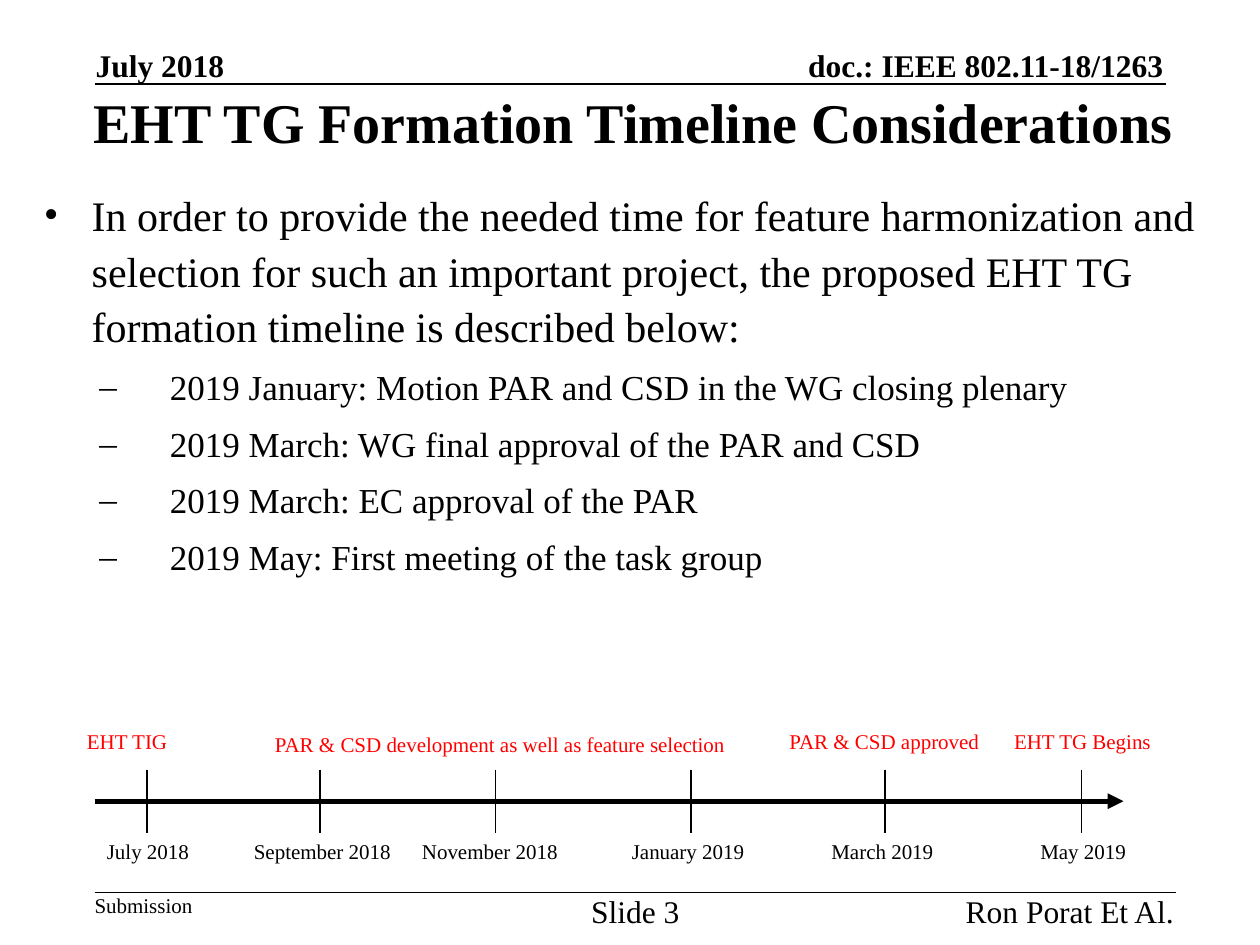
from lxml import etree
from pptx import Presentation
from pptx.dml.color import RGBColor
from pptx.enum.shapes import MSO_CONNECTOR
from pptx.enum.text import MSO_ANCHOR, PP_ALIGN
from pptx.oxml.ns import qn
from pptx.util import Inches, Pt

LEFT, CENTER, RIGHT = PP_ALIGN.LEFT, PP_ALIGN.CENTER, PP_ALIGN.RIGHT
TOP, MIDDLE, BOTTOM = MSO_ANCHOR.TOP, MSO_ANCHOR.MIDDLE, MSO_ANCHOR.BOTTOM
STRAIGHT = MSO_CONNECTOR.STRAIGHT

# The slide is a grid of 120 columns by 90 rows
COLUMNS, ROWS = 120, 90
SLIDE_WIDTH, SLIDE_HEIGHT = Inches(10), Inches(7.5)

THEME = {
    "font": "Times New Roman",
    "ink": RGBColor(0, 0, 0),
    "accent": RGBColor(255, 0, 0),
    "title": 32, "body": 24, "detail": 20, "frame": 18, "small": 12,
    "thin": 1, "thick": 3,
}

TITLE = "EHT TG Formation Timeline Considerations "
BODY = (
    "In order to provide the needed time for feature harmonization and "
    "selection for such an important project, the proposed EHT TG "
    "formation timeline is described below:"
)
STEPS = [
    "2019 January: Motion PAR and CSD in the WG closing plenary",
    "2019 March: WG final approval of the PAR and CSD",
    "2019 March: EC approval of the PAR",
    "2019 May: First meeting of the task group",
]

# Header and footer: text, box, size, bold, alignment, anchor
FRAME_TEXTS = [
    ("July 2018", (9.1, 4.4, 16, 3.6), "frame", True, LEFT, BOTTOM),
    ("doc.: IEEE 802.11-18/1263", (66.8, 4.4, 44, 3.6), "frame", True, RIGHT, BOTTOM),
    ("Submission", (9, 85, 14, 2.4), "small", False, LEFT, TOP),
    ("Slide 3", (53.5, 85, 14, 3.6), "frame", False, CENTER, TOP),
    ("Ron Porat Et Al.", (85.8, 85, 26, 3.6), "frame", False, RIGHT, TOP),
]
RULES = [(9, 111, 8), (9, 112, 85)]  # first column, last column, row

# Timeline: month, tick column, label column, label width
MONTHS = [
    ("July 2018", 14, 9, 10.3),
    ("September 2018", 30.5, 23, 15.6),
    ("November 2018", 47.2, 39, 15.5),
    ("January 2019", 65.8, 59, 13.2),
    ("March 2019", 84.3, 78, 12.2),
    ("May 2019", 103, 97.9, 11),
]
# Milestone, column, row, width
MILESTONES = [
    ("EHT TIG", 7.1, 68.8, 10.2),
    ("PAR & CSD development as well as feature selection", 25, 69.1, 48.7),
    ("PAR & CSD approved", 74, 68.8, 20.6),
    ("EHT TG Begins", 95.4, 68.8, 15.6),
]
AXIS_ROW, AXIS_START, AXIS_END = 76.3, 9, 107
TICK_REACH, LABEL_HEIGHT = 3, 3.6


def across(columns):
    return round(SLIDE_WIDTH * columns / COLUMNS)


def down(rows):
    return round(SLIDE_HEIGHT * rows / ROWS)


def apply(target, formats):
    for name, value in formats.items():
        setattr(target, name, value)


def add_box(slide, box, inset=(0.1, 0.05), anchor=TOP, wrap=False):
    left, top, width, height = box
    shape = slide.shapes.add_textbox(across(left), down(top), across(width), down(height))
    side, edge = (Inches(length) for length in inset)
    apply(shape.text_frame, {
        "margin_left": side, "margin_right": side,
        "margin_top": edge, "margin_bottom": edge,
        "vertical_anchor": anchor, "word_wrap": wrap,
    })
    return shape.text_frame


def write(paragraph, text, size, color="ink", bold=False, align=LEFT):
    paragraph.alignment = align
    run = paragraph.add_run()
    run.text = text
    apply(run.font, {"name": THEME["font"], "size": Pt(THEME[size]), "bold": bold})
    run.font.color.rgb = THEME[color]


def add_bullet(paragraph, mark, margin, hanging):
    apply(paragraph, {"line_spacing": 1.1, "space_before": Pt(6)})
    properties = paragraph._p.get_or_add_pPr()
    properties.set("marL", str(Inches(margin)))
    properties.set("indent", str(-Inches(hanging)))
    etree.SubElement(properties, qn("a:buFont")).set("typeface", THEME["font"])
    etree.SubElement(properties, qn("a:buChar")).set("char", mark)


def add_line(slide, start, end, weight="thin", arrow=False):
    connector = slide.shapes.add_connector(
        STRAIGHT, across(start[0]), down(start[1]), across(end[0]), down(end[1]))
    connector.line.color.rgb = THEME["ink"]
    connector.line.width = Pt(THEME[weight])
    if arrow:
        line = connector.line._get_or_add_ln()
        etree.SubElement(line, qn("a:tailEnd")).set("type", "triangle")
    etree.SubElement(connector._element.spPr, qn("a:effectLst"))


def add_frame(slide):
    for text, box, size, bold, align, anchor in FRAME_TEXTS:
        # Wrapping boxes wider than their text keep each entry on one line
        frame = add_box(slide, box, (0, 0), anchor, wrap=True)
        write(frame.paragraphs[0], text, size, bold=bold, align=align)
    for first, last, row in RULES:
        add_line(slide, (first, row), (last, row))


def add_content(slide):
    title = add_box(slide, (3, 8, 116, 7), anchor=MIDDLE, wrap=True)
    write(title.paragraphs[0], TITLE, "title", bold=True, align=CENTER)

    body = add_box(slide, (3, 17, 115, 42), wrap=True)
    write(body.paragraphs[0], BODY, "body")
    add_bullet(body.paragraphs[0], "•", 0.38, 0.38)
    for step in STEPS:
        paragraph = body.add_paragraph()
        paragraph.level = 1
        write(paragraph, step, "detail")
        add_bullet(paragraph, "–", 1, 0.56)


def add_timeline(slide):
    add_line(slide, (AXIS_START, AXIS_ROW), (AXIS_END, AXIS_ROW), "thick", arrow=True)
    tick_top, tick_bottom = AXIS_ROW - TICK_REACH, AXIS_ROW + TICK_REACH
    for month, tick, left, width in MONTHS:
        add_line(slide, (tick, tick_top), (tick, tick_bottom))
        label = add_box(slide, (left, tick_bottom, width, LABEL_HEIGHT))
        write(label.paragraphs[0], month, "small")
    for milestone, left, top, width in MILESTONES:
        label = add_box(slide, (left, top, width, LABEL_HEIGHT))
        write(label.paragraphs[0], milestone, "small", "accent")


def main():
    presentation = Presentation()
    apply(presentation, {"slide_width": SLIDE_WIDTH, "slide_height": SLIDE_HEIGHT})
    slide = presentation.slides.add_slide(presentation.slide_layouts[6])
    add_frame(slide)
    add_content(slide)
    add_timeline(slide)
    presentation.save("out.pptx")


if __name__ == "__main__":
    main()
